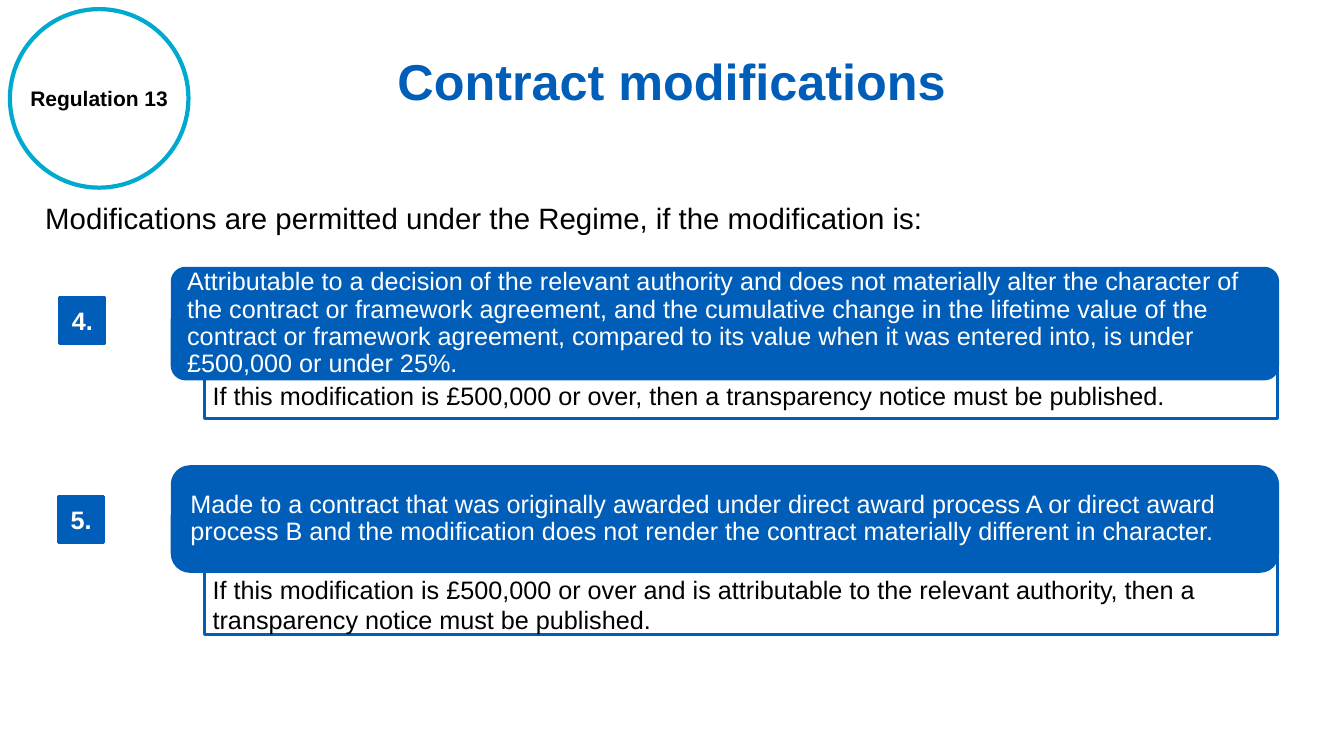
"""Builds the slide on permitted contract modifications."""
from pptx import Presentation
from pptx.dml.color import RGBColor
from pptx.enum.shapes import MSO_SHAPE
from pptx.enum.text import MSO_ANCHOR, MSO_AUTO_SIZE, PP_ALIGN
from pptx.util import Cm, Pt

RECT, ROUNDED, OVAL = MSO_SHAPE.RECTANGLE, MSO_SHAPE.ROUNDED_RECTANGLE, MSO_SHAPE.OVAL
LEFT, CENTER = PP_ALIGN.LEFT, PP_ALIGN.CENTER
TOP, MIDDLE = MSO_ANCHOR.TOP, MSO_ANCHOR.MIDDLE

COLORS = {"blue": "005EB8", "teal": "00A9CE", "white": "FFFFFF", "black": "000000"}
FONT = "Arial"

TITLE = "Contract modifications"
BADGE = "Regulation 13"
INTRO = "Modifications are permitted under the Regime, if the modification is:"
RULES = [
    {
        "number": "4.",
        "rule": "Attributable to a decision of the relevant authority and does not materially "
                "alter the character of the contract or framework agreement, and the cumulative "
                "change in the lifetime value of the contract or framework agreement, compared to "
                "its value when it was entered into, is under £500,000 or under 25%.",
        "note": "If this modification is £500,000 or over, then a transparency notice "
                "must be published.",
        "top": 6.76, "height": 2.79, "inset": 0.28, "corner": 0.12,
        "number_at": (1.5, 7.5), "frame_top": 8.54, "note_top": 9.45, "note_height": 1.02,
    },
    {
        "number": "5.",
        "rule": "Made to a contract that was originally awarded under direct award process A or "
                "direct award process B and the modification does not render the contract "
                "materially different in character.",
        "note": "If this modification is £500,000 or over and is attributable to the relevant "
                "authority, then a transparency notice must be published.",
        "top": 11.76, "height": 2.64, "inset": 0.33, "corner": 0.17,
        "number_at": (1.47, 12.52), "frame_top": 14, "note_top": 14.35, "note_height": 1.8,
    },
]
BANNER_LEFT, RIGHT = 4.34, 32.2
FRAME_LEFT, FRAME_HEIGHT = 5.15, 2
NOTE_LEFT, NUMBER_SIZE = 5.11, 1.15


def rgb(name):
    return RGBColor.from_string(COLORS[name])


def write(s, text, size=18, color="black", bold=False, align=LEFT, anchor=TOP,
          wrap=True, inset=None, spacing=None):
    tf = s.text_frame
    tf.auto_size = MSO_AUTO_SIZE.NONE
    tf.word_wrap = wrap
    tf.vertical_anchor = anchor
    if inset is not None:
        tf.margin_left = tf.margin_right = tf.margin_top = tf.margin_bottom = Cm(inset)
    p = tf.paragraphs[0]
    p.alignment = align
    if spacing:
        p.line_spacing = spacing
    r = p.add_run()
    r.text = text
    r.font.name, r.font.size, r.font.bold = FONT, Pt(size), bold
    r.font.color.rgb = rgb(color)


def add_box(shapes, kind, x, y, w, h, fill="blue", line="blue", weight=2):
    s = shapes.add_shape(kind, Cm(x), Cm(y), Cm(w), Cm(h))
    s.shadow.inherit = False
    if fill:
        s.fill.solid()
        s.fill.fore_color.rgb = rgb(fill)
    else:
        s.fill.background()
    s.line.color.rgb = rgb(line)
    s.line.width = Pt(weight)
    return s


def add_rule(shapes, rule):
    add_box(shapes, RECT, FRAME_LEFT, rule["frame_top"], RIGHT - FRAME_LEFT, FRAME_HEIGHT,
            fill=None)
    banner = add_box(shapes, ROUNDED, BANNER_LEFT, rule["top"], RIGHT - BANNER_LEFT,
                     rule["height"])
    banner.adjustments[0] = rule["corner"]
    write(banner, rule["rule"], color="white", anchor=MIDDLE, inset=rule["inset"], spacing=0.9)
    number = add_box(shapes, RECT, *rule["number_at"], NUMBER_SIZE, NUMBER_SIZE)
    write(number, rule["number"], color="white", bold=True, align=CENTER, anchor=MIDDLE,
          wrap=False)
    note = shapes.add_textbox(Cm(NOTE_LEFT), Cm(rule["note_top"]), Cm(RIGHT - NOTE_LEFT),
                              Cm(rule["note_height"]))
    write(note, rule["note"])


def main():
    prs = Presentation()
    prs.slide_width, prs.slide_height = Cm(33.87), Cm(19.05)
    slide = prs.slides.add_slide(prs.slide_layouts[5])
    shapes = slide.shapes

    title = shapes.title
    title.left, title.top, title.width, title.height = Cm(9.73), Cm(0.13), Cm(14.4), Cm(3.81)
    write(title, TITLE, size=36, color="blue", bold=True, align=CENTER, anchor=MIDDLE)

    intro = shapes.add_textbox(Cm(0.89), Cm(4.93), Cm(32.1), Cm(1.4))
    write(intro, INTRO, size=21)

    badge = add_box(shapes, OVAL, 0.25, 0.23, 4.5, 4.5, fill="white", line="teal", weight=3)
    write(badge, BADGE, size=15, bold=True, align=CENTER, anchor=MIDDLE, wrap=False)

    for rule in RULES:
        add_rule(shapes, rule)
    prs.save("out.pptx")


if __name__ == "__main__":
    main()
